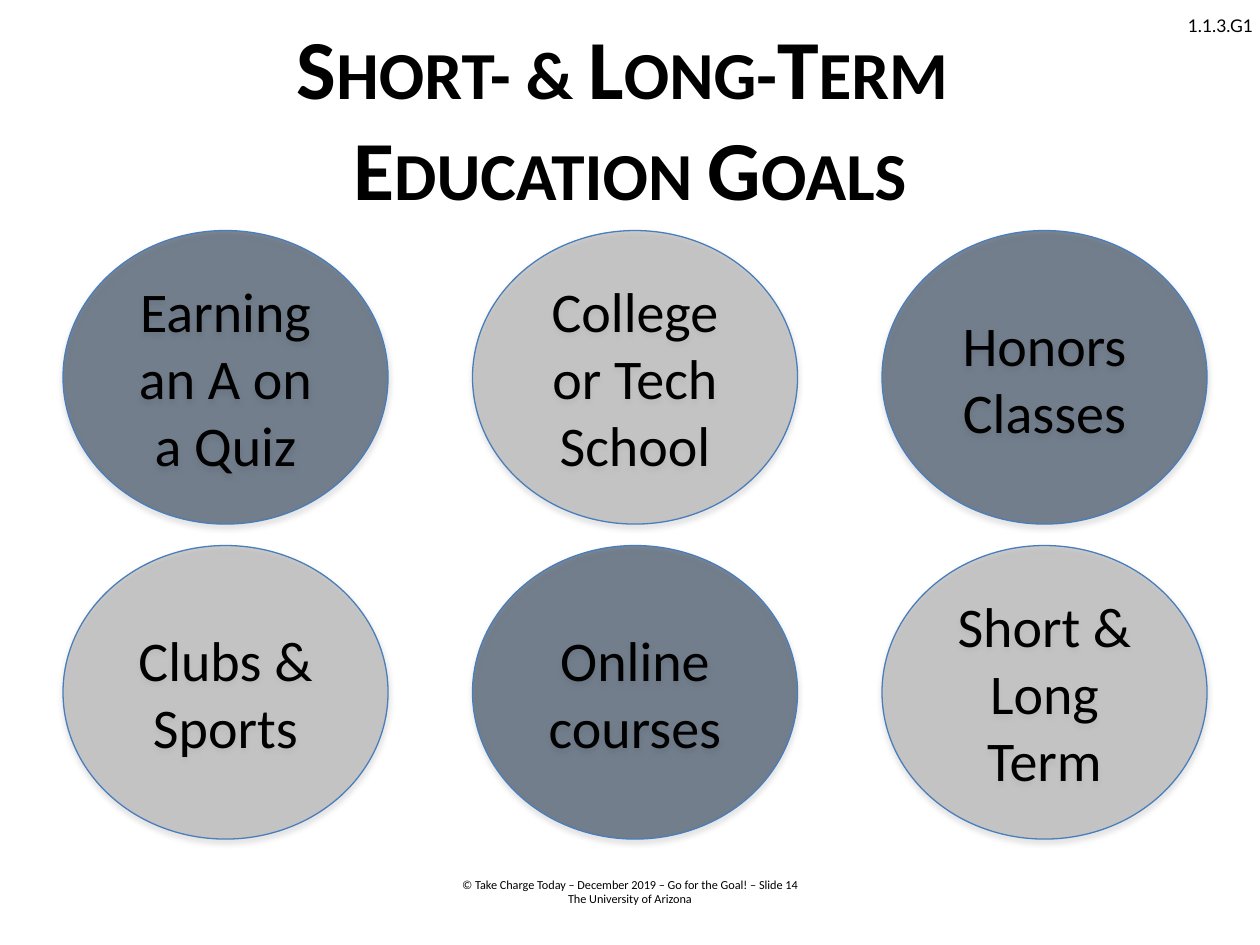
from lxml.etree import SubElement
from pptx import Presentation
from pptx.dml.color import RGBColor
from pptx.enum.shapes import MSO_SHAPE
from pptx.enum.text import MSO_ANCHOR, PP_ALIGN
from pptx.oxml.ns import qn
from pptx.util import Inches, Pt

COLORS = {
    "text": "000000",
    "navy": "10253F",
    "gray": "A6A6A6",
    "outline": "4A7EBB",
    "shadow": "808080",
}
GOALS = [
    ["Earning an A on a Quiz", "College or Tech School", "Honors Classes"],
    ["Clubs & Sports", "Online courses", "Short & Long Term"],
]


class GoalSlide:
    """Holds the slide style and adds each kind of element to the page."""

    font = "Calibri"

    def __init__(self, page):
        self.page = page

    def color(self, name):
        return RGBColor.from_string(COLORS[name])

    def fill_text(self, frame, lines, size, font=None, bold=False, align=PP_ALIGN.CENTER):
        frame.word_wrap = True
        frame.text = "\n".join(lines)
        for paragraph in frame.paragraphs:
            paragraph.alignment = align
            paragraph.font.name = font or self.font
            paragraph.font.size = Pt(size)
            paragraph.font.bold = bold
            paragraph.font.color.rgb = self.color("text")

    def text(self, left, top, width, height, lines, size, **style):
        box = self.page.shapes.add_textbox(
            Inches(left), Inches(top), Inches(width), Inches(height))
        self.fill_text(box.text_frame, lines, size, **style)
        return box

    def title(self, left, top, width, height, text):
        box = self.text(left, top, width, height, [text], 48, bold=True)
        box.text_frame.vertical_anchor = MSO_ANCHOR.MIDDLE
        for span in box.text_frame.paragraphs[0].runs:
            span._r.get_or_add_rPr().set("cap", "small")

    def circle(self, left, top, width, height, text, fill):
        shape = self.page.shapes.add_shape(
            MSO_SHAPE.OVAL, Inches(left), Inches(top), Inches(width), Inches(height))
        shape.fill.solid()
        shape.fill.fore_color.rgb = self.color(fill)
        fill_color = shape._element.spPr.find(qn("a:solidFill"))[0]
        SubElement(fill_color, qn("a:alpha"), val="54000")
        shape.line.color.rgb = self.color("outline")
        shape.line.width = Pt(0.75)
        self.shade(shape)
        shape.text_frame.vertical_anchor = MSO_ANCHOR.MIDDLE
        self.fill_text(shape.text_frame, [text], 32)

    def shade(self, shape):
        shape.shadow.inherit = False
        effects = shape._element.spPr.find(qn("a:effectLst"))
        shadow = SubElement(
            effects, qn("a:outerShdw"), blurRad=str(Pt(3.1)), dist=str(Pt(1.8)),
            dir="5400000", rotWithShape="0")
        tint = SubElement(shadow, qn("a:srgbClr"), val=COLORS["shadow"])
        SubElement(tint, qn("a:alpha"), val="35000")


def main():
    deck = Presentation()
    deck.slide_width, deck.slide_height = Inches(10), Inches(7.5)
    slide = GoalSlide(deck.slides.add_slide(deck.slide_layouts[6]))
    slide.text(9.33, 0.07, 0.83, 0.27, ["1.1.3.G1"], 10,
               font="Lato", align=PP_ALIGN.LEFT)
    slide.text(1.25, 6.91, 7.5, 0.34, [
        "© Take Charge Today – December 2019 – Go for the Goal! – Slide 14",
        "The University of Arizona",
    ], 7)
    slide.title(0.5, 0.3, 9, 1.25, "Short- & Long-Term \vEducation Goals")
    for row, goals in enumerate(GOALS):
        for column, goal in enumerate(goals):
            fill = "gray" if (row + column) % 2 else "navy"
            slide.circle(0.5 + 3.25 * column, 1.83 + 2.5 * row, 2.58, 2.33, goal, fill)
    deck.save("out.pptx")


if __name__ == "__main__":
    main()
